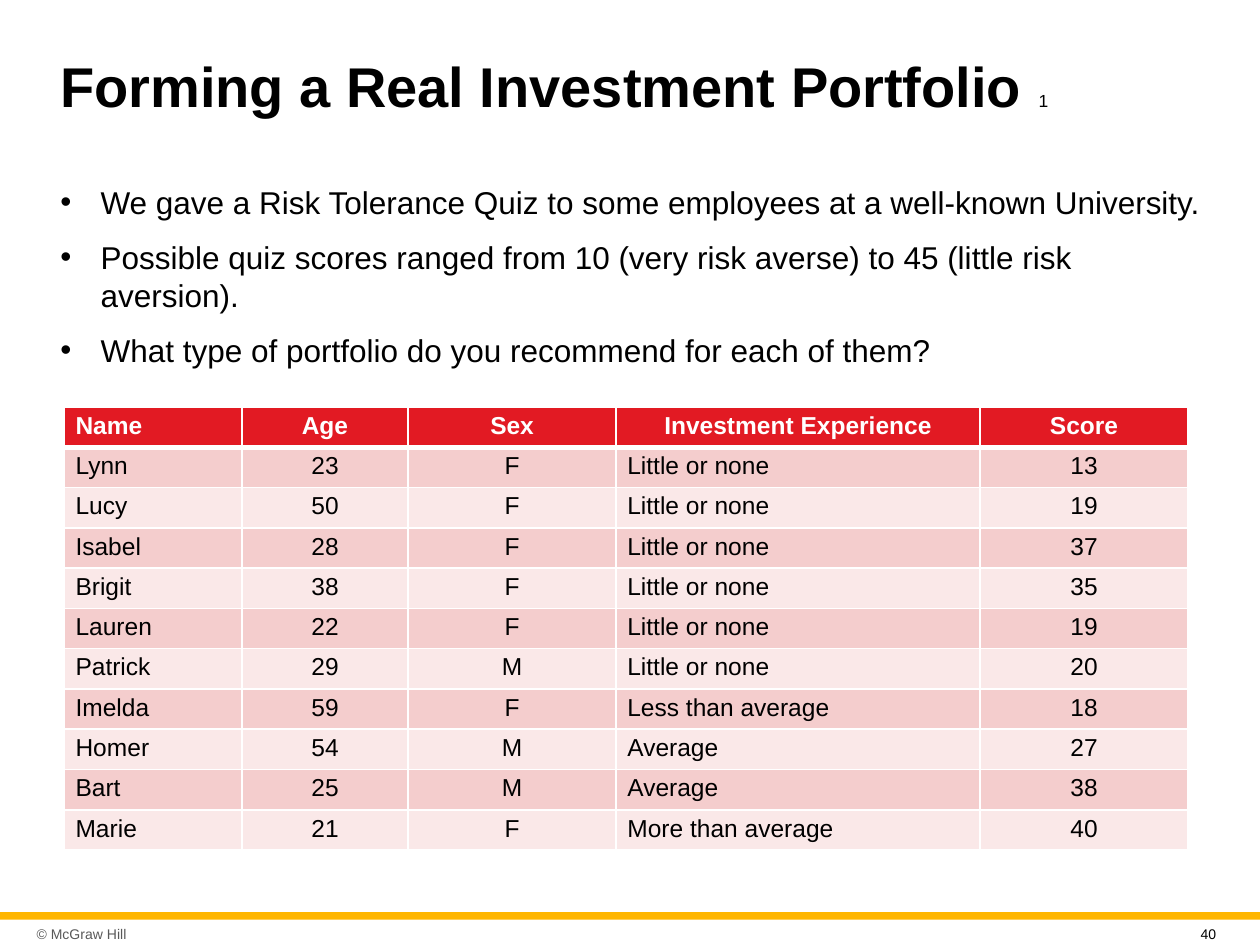
from lxml import etree
from pptx import Presentation
from pptx.dml.color import RGBColor
from pptx.enum.shapes import MSO_SHAPE
from pptx.enum.text import MSO_ANCHOR, PP_ALIGN
from pptx.oxml.ns import qn
from pptx.util import Inches, Pt

RECTANGLE = MSO_SHAPE.RECTANGLE
TOP, MIDDLE = MSO_ANCHOR.TOP, MSO_ANCHOR.MIDDLE
LEFT, CENTER = PP_ALIGN.LEFT, PP_ALIGN.CENTER

FONT = "Arial"
BLACK = RGBColor(0x00, 0x00, 0x00)
WHITE = RGBColor(0xFF, 0xFF, 0xFF)
GRAY = RGBColor(0x59, 0x59, 0x59)
GOLD = RGBColor(0xFF, 0xB6, 0x00)
RED = RGBColor(0xE2, 0x1A, 0x23)
ROSE = RGBColor(0xF4, 0xCD, 0xCD)
PALE_ROSE = RGBColor(0xFA, 0xE8, 0xE8)

TITLE = "Forming a Real Investment Portfolio "
TITLE_PART = "1"
BULLETS = [
    "We gave a Risk Tolerance Quiz to some employees at a well-known University.",
    "Possible quiz scores ranged from 10 (very risk averse) to 45 (little risk aversion).",
    "What type of portfolio do you recommend for each of them?",
]
COPYRIGHT = "© McGraw Hill"
PAGE_NUMBER = "40"

COLUMNS = [
    ("Name", 1.41, LEFT),
    ("Age", 1.32, CENTER),
    ("Sex", 1.65, CENTER),
    ("Investment Experience", 2.89, LEFT),
    ("Score", 1.65, CENTER),
]
EMPLOYEES = [
    ("Lynn", 23, "F", "Little or none", 13),
    ("Lucy", 50, "F", "Little or none", 19),
    ("Isabel", 28, "F", "Little or none", 37),
    ("Brigit", 38, "F", "Little or none", 35),
    ("Lauren", 22, "F", "Little or none", 19),
    ("Patrick", 29, "M", "Little or none", 20),
    ("Imelda", 59, "F", "Less than average", 18),
    ("Homer", 54, "M", "Average", 27),
    ("Bart", 25, "M", "Average", 38),
    ("Marie", 21, "F", "More than average", 40),
]
ROW_HEIGHT = 0.32


def style(font, size, color=BLACK, bold=False):
    font.name = FONT
    font.size = Pt(size)
    font.color.rgb = color
    font.bold = bold


def add_text(slide, box, text, size, color=BLACK, bold=False, anchor=TOP):
    frame = slide.shapes.add_textbox(*map(Inches, box)).text_frame
    frame.word_wrap = True
    frame.vertical_anchor = anchor
    frame.text = text
    for paragraph in frame.paragraphs:
        for run in paragraph.runs:
            style(run.font, size, color, bold)
    return frame


def add_bullet(paragraph):
    properties = paragraph._p.get_or_add_pPr()
    properties.set("marL", str(Inches(0.32)))
    properties.set("indent", str(-Inches(0.32)))
    etree.SubElement(properties, qn("a:buFont")).set("typeface", FONT)
    etree.SubElement(properties, qn("a:buChar")).set("char", "•")


def set_borders(cell, bottom_width):
    properties = cell._tc.get_or_add_tcPr()
    widths = {"lnL": 1, "lnR": 1, "lnT": 1, "lnB": bottom_width}
    for position, (side, width) in enumerate(widths.items()):
        line = etree.Element(qn(f"a:{side}"), w=str(Pt(width)))
        fill = etree.SubElement(line, qn("a:solidFill"))
        etree.SubElement(fill, qn("a:srgbClr")).set("val", str(WHITE))
        properties.insert(position, line)


def add_employee_table(slide):
    rows = [tuple(name for name, _, _ in COLUMNS)] + EMPLOYEES
    width = sum(column_width for _, column_width, _ in COLUMNS)
    table = slide.shapes.add_table(
        len(rows), len(COLUMNS), Inches(0.51), Inches(3.23),
        Inches(width), Inches(ROW_HEIGHT * len(rows)),
    ).table
    for column, (_, column_width, _) in zip(table.columns, COLUMNS):
        column.width = Inches(column_width)
    for r, row in enumerate(rows):
        table.rows[r].height = Inches(ROW_HEIGHT)
        header = r == 0
        fill = RED if header else (ROSE if r % 2 else PALE_ROSE)
        for c, value in enumerate(row):
            cell = table.cell(r, c)
            cell.margin_left = cell.margin_right = Inches(0.09)
            cell.margin_top = cell.margin_bottom = Inches(0.04)
            cell.fill.solid()
            cell.fill.fore_color.rgb = fill
            set_borders(cell, 3 if header else 1)
            cell.text = str(value)
            paragraph = cell.text_frame.paragraphs[0]
            paragraph.alignment = CENTER if header and c else COLUMNS[c][2]
            style(paragraph.runs[0].font, 14, WHITE if header else BLACK, header)


def main():
    deck = Presentation()
    deck.slide_width, deck.slide_height = Inches(10), Inches(7.5)
    slide = deck.slides.add_slide(deck.slide_layouts[6])

    footer_bar = slide.shapes.add_shape(
        RECTANGLE, Inches(0), Inches(7.24), Inches(10), Inches(0.06))
    footer_bar.shadow.inherit = False
    footer_bar.fill.solid()
    footer_bar.fill.fore_color.rgb = GOLD
    footer_bar.line.fill.background()

    copyright_line = add_text(
        slide, (0.24, 7.29, 1.35, 0.24), COPYRIGHT, 8, GRAY, anchor=MIDDLE)
    copyright_line.margin_left = copyright_line.margin_right = Inches(0.05)

    title = add_text(
        slide, (0.38, 0.21, 9.25, 0.99), TITLE, 32, bold=True, anchor=MIDDLE)
    title.paragraphs[0].line_spacing = 0.9
    title_part = title.paragraphs[0].add_run()
    title_part.text = TITLE_PART
    style(title_part.font, 10)

    body = add_text(slide, (0.38, 1.4, 9.25, 1.62), "\n".join(BULLETS), 18)
    for i, paragraph in enumerate(body.paragraphs):
        add_bullet(paragraph)
        if i:
            paragraph.space_before = Pt(10)

    add_employee_table(slide)
    add_text(slide, (9.43, 7.3, 0.39, 0.18), PAGE_NUMBER, 8)
    deck.save("out.pptx")


if __name__ == "__main__":
    main()
